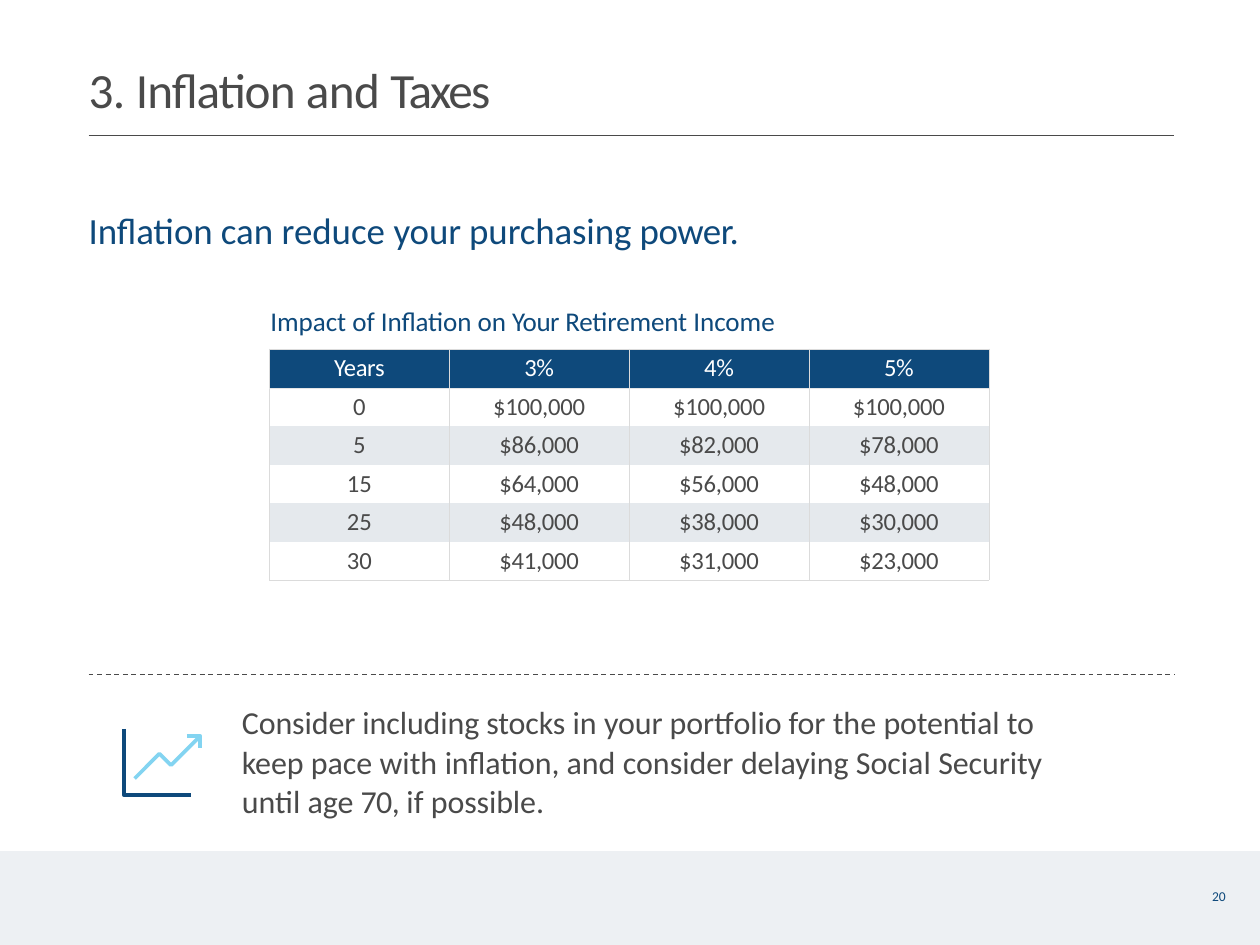
from lxml import etree
from pptx import Presentation
from pptx.dml.color import RGBColor
from pptx.enum.dml import MSO_LINE
from pptx.enum.shapes import MSO_CONNECTOR, MSO_SHAPE
from pptx.enum.text import PP_ALIGN
from pptx.oxml.ns import qn
from pptx.util import Emu, Pt

FONT = "Calibri"
NAVY, GRAY, SKY = "0E497B", "4A4A4A", "83D4F1"
WHITE, FOOTER, STRIPE = "FFFFFF", "EDF0F3", "E5E9ED"
GRID, HEADER_EDGE = "DBDBDB", "E4E5E6"

INCOME_ROWS = [
    ["Years", "3%", "4%", "5%"],
    ["0", "$100,000", "$100,000", "$100,000"],
    ["5", "$86,000", "$82,000", "$78,000"],
    ["15", "$64,000", "$56,000", "$48,000"],
    ["25", "$48,000", "$38,000", "$30,000"],
    ["30", "$41,000", "$31,000", "$23,000"],
]


def px(value):
    """100 px to the inch."""
    return Emu(value * 9144)


def color(value):
    return RGBColor.from_string(value)


def add_runs(paragraph, runs, size, tint):
    """Each run is a (text, letter spacing in points) pair."""
    for text, spacing in runs:
        run = paragraph.add_run()
        run.text = text
        run.font.name = FONT
        run.font.size = Pt(size)
        run.font.color.rgb = color(tint)
        run.font._element.set("spc", str(round(spacing * 100)))


def add_text(slide, box, paragraphs, tint, top_inset=1):
    """Each paragraph is (runs, size, space before, left indent, line spacing)."""
    frame = slide.shapes.add_textbox(*map(px, box)).text_frame
    frame.word_wrap = True
    frame.margin_left = frame.margin_right = frame.margin_bottom = 0
    frame.margin_top = px(top_inset)
    for index, (runs, size, before, indent, spacing) in enumerate(paragraphs):
        paragraph = frame.add_paragraph() if index else frame.paragraphs[0]
        paragraph.space_before = Pt(before)
        paragraph.line_spacing = spacing
        paragraph._p.get_or_add_pPr().set("marL", str(px(indent)))
        add_runs(paragraph, runs, size, tint)


def add_rule(slide, y, dash=None):
    rule = slide.shapes.add_connector(
        MSO_CONNECTOR.STRAIGHT, px(100), px(y), px(1325), px(y))
    rule.line.color.rgb = color(GRAY)
    rule.line.width = Pt(1)
    if dash:
        rule.line.dash_style = dash
    etree.SubElement(rule._element.spPr, qn("a:effectLst"))


def add_polyline(slide, points, tint):
    start, *rest = [(px(x), px(y)) for x, y in points]
    builder = slide.shapes.build_freeform(*start)
    builder.add_line_segments(rest, close=False)
    shape = builder.convert_to_shape()
    shape.shadow.inherit = False
    shape.fill.background()
    shape.line.color.rgb = color(tint)
    shape.line.width = Pt(3)


def set_borders(cell, top=None, bottom=None):
    properties = cell._tc.get_or_add_tcPr()
    for side, tint in (("L", GRID), ("R", GRID), ("T", top), ("B", bottom)):
        line = etree.SubElement(properties, qn(f"a:ln{side}"), w=str(Pt(0.5)))
        if tint:
            fill = etree.SubElement(line, qn("a:solidFill"))
            etree.SubElement(fill, qn("a:srgbClr"), val=tint)
        else:
            etree.SubElement(line, qn("a:noFill"))


def fill_cell(cell, text, row):
    header, last = row == 0, row == len(INCOME_ROWS) - 1
    set_borders(cell,
                top=GRID if header else HEADER_EDGE if row == 1 else None,
                bottom=HEADER_EDGE if header else GRID if last else None)
    if row % 2 and not header:
        cell.fill.background()
    else:
        cell.fill.solid()
        cell.fill.fore_color.rgb = color(NAVY if header else STRIPE)
    cell.margin_left = cell.margin_right = cell.margin_bottom = 0
    cell.margin_top = px(5)
    paragraph = cell.text_frame.paragraphs[0]
    paragraph.alignment = PP_ALIGN.CENTER
    paragraph.space_before = Pt(3.5)
    spacing = -0.3 if header else -0.2 if "$" in text else 0
    add_runs(paragraph, [(text, spacing)], 20, WHITE if header else GRAY)


def add_income_table(slide):
    table = slide.shapes.add_table(
        len(INCOME_ROWS), len(INCOME_ROWS[0]),
        px(304), px(394), px(812), px(261)).table
    table.first_row = table.horz_banding = False
    for column in table.columns:
        column.width = px(203)
    for row, texts in enumerate(INCOME_ROWS):
        table.rows[row].height = px(43 if row % 2 else 44)
        for column, text in enumerate(texts):
            fill_cell(table.cell(row, column), text, row)


def add_footer_band(slide):
    band = slide.shapes.add_shape(
        MSO_SHAPE.RECTANGLE, px(0), px(961), px(1422), px(106))
    band.shadow.inherit = False
    band.fill.solid()
    band.fill.fore_color.rgb = color(FOOTER)
    band.line.fill.background()


def add_growth_icon(slide):
    add_polyline(slide, [(140, 823), (140, 898), (216, 898)], NAVY)
    add_polyline(slide, [(211, 831), (226, 831), (226, 845)], SKY)
    add_polyline(slide, [(152, 879), (180, 851), (193, 864), (226, 831)], SKY)


def main():
    presentation = Presentation()
    presentation.slide_width, presentation.slide_height = px(1422), px(1067)
    slide = presentation.slides.add_slide(presentation.slide_layouts[6])

    # Footer band and page number
    add_footer_band(slide)
    add_text(slide, (1367, 1002, 28, 20), [([("20", 0)], 11, 1, 1, 1)], NAVY)

    # Title
    title = [("3. ", -0.5), ("Inflation ", -0.7), ("and ", -0.5), ("Taxes", -1.4)]
    add_text(slide, (99, 66, 466, 69), [(title, 40, 1, 1, 1)], GRAY)
    add_rule(slide, 153)

    # Heading, table caption and table
    heading = [("Inflation ", -0.1), ("can reduce ", 0),
               ("your purchasing ", -0.1), ("power.", -0.4)]
    caption = [("Impact of ", 0), ("Inflation ", -0.1), ("on ", 0),
               ("Your ", -0.4), ("Retirement ", -0.1), ("Income", 0)]
    add_text(slide, (99, 233, 785, 148),
             [(heading, 30, 1, 1, 1), (caption, 22, 43, 206, 1)], NAVY)
    add_income_table(slide)

    # Advice
    add_rule(slide, 762, MSO_LINE.DASH)
    add_growth_icon(slide)
    advice = [("Consider including stocks ", -0.1), ("in ", 0),
              ("your portfolio for ", -0.1), ("the ", 0),
              ("potential to keep ", -0.1), ("pace with ", 0),
              ("inflation, ", -0.1), ("and consider ", 0),
              ("delaying ", -0.1), ("Social ", 0), ("Security ", -0.1),
              ("until ", 0), ("age ", -0.1), ("70, ", -0.5), ("if ", 0),
              ("possible.", -0.1)]
    add_text(slide, (272, 792, 964, 134), [(advice, 26, 0.1, 1, 1.03)], GRAY, 0)

    presentation.save("out.pptx")


if __name__ == "__main__":
    main()
